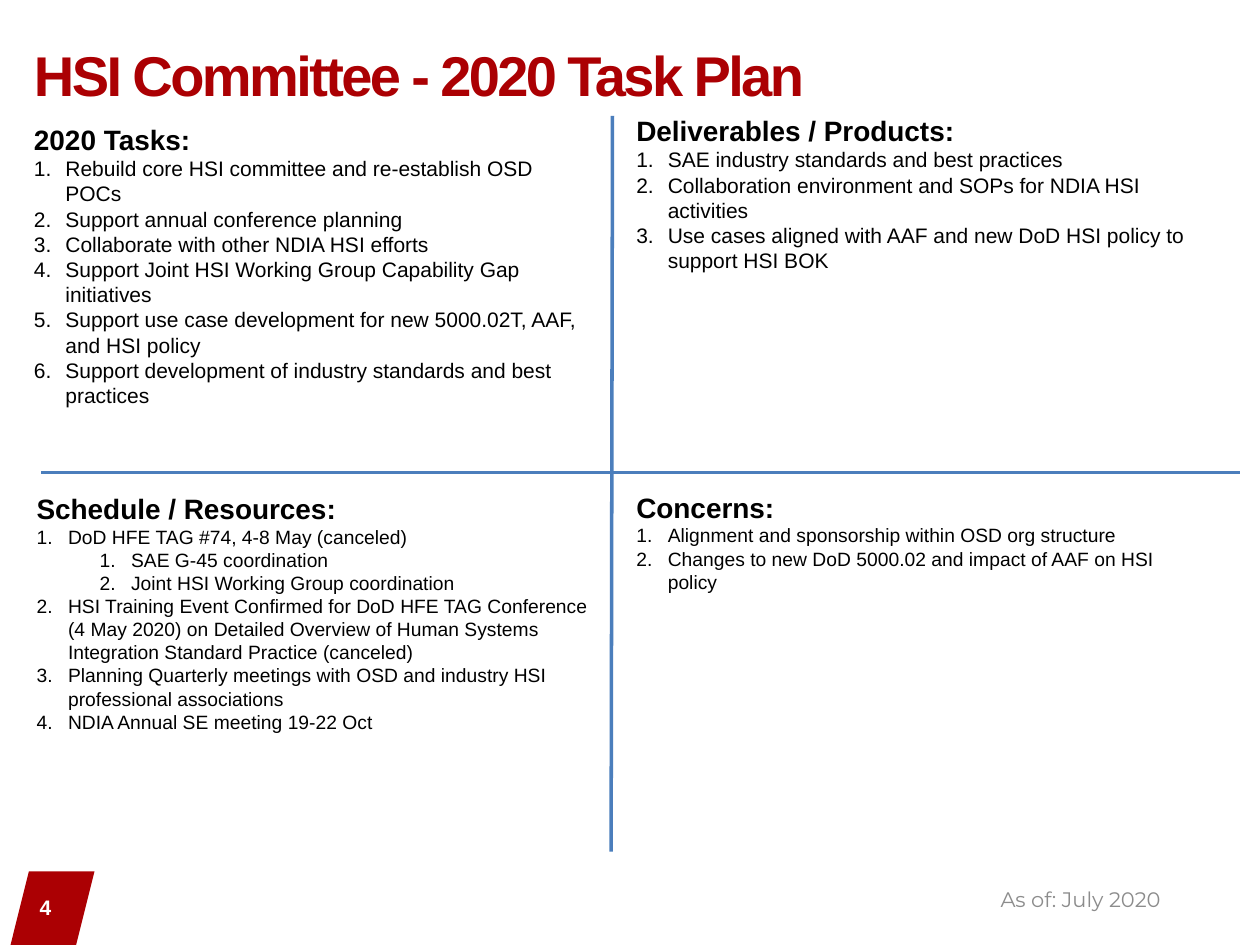
from lxml import etree
from pptx import Presentation
from pptx import util as u
from pptx.dml.color import RGBColor
from pptx.enum import shapes, text
from pptx.oxml.ns import qn

Pt = u.Pt
COLORS = {"red": "AB0003", "blue": "4B7EBC", "gray": "8C8C8C",
          "black": "000000", "white": "FFFFFF"}

TITLE = "HSI Committee - 2020 Task Plan"
QUADRANTS = [
    {"heading": "2020 Tasks:", "box": (12.2, 66.2, 332, 199), "size": 12, "items": [
        (0, "Rebuild core HSI committee and re-establish OSD POCs"),
        (0, "Support annual conference planning"),
        (0, "Collaborate with other NDIA HSI efforts"),
        (0, "Support Joint HSI Working Group Capability Gap initiatives"),
        (0, "Support use case development for new 5000.02T, AAF, and HSI policy"),
        (0, "Support development of industry standards and best practices")]},
    {"heading": "Deliverables / Products:", "box": (356.4, 61.2, 345, 99.4), "size": 12, "items": [
        (0, "SAE industry standards and best practices"),
        (0, "Collaboration environment and SOPs for NDIA HSI activities"),
        (0, "Use cases aligned with AAF and new DoD HSI policy to support HSI BOK")]},
    {"heading": "Schedule / Resources:", "box": (13.7, 277.2, 335, 173.5), "size": 11, "items": [
        (0, "DoD HFE TAG #74, 4-8 May (canceled)"),
        (1, "SAE G-45 coordination"),
        (1, "Joint HSI Working Group coordination"),
        (0, "HSI Training Event Confirmed for DoD HFE TAG Conference (4 May 2020) on "
            "Detailed Overview of Human Systems Integration Standard Practice (canceled)"),
        (0, "Planning Quarterly meetings with OSD and industry HSI professional associations"),
        (0, "NDIA Annual SE meeting 19-22 Oct")]},
    {"heading": "Concerns:", "box": (356.4, 276.5, 332.6, 67), "size": 11, "items": [
        (0, "Alignment and sponsorship within OSD org structure"),
        (0, "Changes to new DoD 5000.02 and impact of AAF on HSI policy")]},
]
DIVIDERS = [(350, 66.2, 349.2, 486.7), (23.7, 270, 708.5, 270)]
FOOTERS = [
    {"text": "4", "box": (12.2, 504, 168, 28.8), "left": 10.5, "align": "LEFT",
     "font": {"name": "Arial", "size": Pt(12), "bold": True}, "color": "white"},
    {"text": "As of: July 2020", "box": (533.5, 499.7, 168, 28.8), "left": 7.2, "align": "CENTER",
     "font": {"name": "Montserrat", "size": Pt(12), "bold": False}, "color": "gray"},
]


def rgb(name):
    return RGBColor.from_string(COLORS[name])


def assign(obj, values):
    for name, value in values.items():
        setattr(obj, name, value)


def place(sp, box):
    assign(sp, dict(zip(("left", "top", "width", "height"), map(Pt, box))))


def format_frame(tf, anchor, left=7.2):
    assign(tf, {"word_wrap": True, "auto_size": text.MSO_AUTO_SIZE.NONE,
                "vertical_anchor": anchor, "margin_left": Pt(left),
                "margin_right": Pt(7.2), "margin_top": Pt(3.6), "margin_bottom": Pt(3.6)})


def add_run(p, content, font, color):
    r = p.add_run()
    r.text = content
    assign(r.font, font)
    r.font.color.rgb = rgb(color)
    return r


def add_line(p, content, size, bold, indent, hanging, level=0, numbered=True):
    assign(p, {"level": level, "space_before": Pt(0), "space_after": Pt(0),
               "line_spacing": 1.0, "alignment": text.PP_ALIGN.LEFT})
    pPr = p._p.get_or_add_pPr()
    pPr.set("marL", str(Pt(indent)))
    pPr.set("indent", str(-Pt(hanging)))
    if numbered:
        etree.SubElement(pPr, qn("a:buFont"), typeface="+mj-lt")
        etree.SubElement(pPr, qn("a:buAutoNum"), type="arabicPeriod")
    else:
        etree.SubElement(pPr, qn("a:buNone"))
    add_run(p, content, {"name": "Arial", "size": Pt(size), "bold": bold}, "black")


def fill_quadrant(sp, quadrant):
    place(sp, quadrant["box"])
    tf = sp.text_frame
    format_frame(tf, text.MSO_ANCHOR.TOP)
    add_line(tf.paragraphs[0], quadrant["heading"], 16, True, 15, 15, numbered=False)
    for level, item in quadrant["items"]:
        add_line(tf.add_paragraph(), item, quadrant["size"], False, 18 + 36 * level, 18, level)


def main():
    prs = Presentation()
    assign(prs, {"slide_width": Pt(720), "slide_height": Pt(540)})
    s = prs.slides.add_slide(prs.slide_layouts.get_by_name("Comparison"))

    badge = s.shapes.add_shape(shapes.MSO_SHAPE.PARALLELOGRAM, Pt(6), Pt(498), Pt(48), Pt(42))
    badge.shadow.inherit = False
    badge.fill.solid()
    badge.fill.fore_color.rgb = rgb("red")
    badge.line.fill.background()

    title = s.shapes.title
    place(title, (12.2, 11.5, 594, 61.2))
    format_frame(title.text_frame, text.MSO_ANCHOR.MIDDLE)
    p = title.text_frame.paragraphs[0]
    p.alignment = text.PP_ALIGN.LEFT
    r = add_run(p, TITLE, {"name": "Arial", "size": Pt(32), "bold": True}, "red")
    r._r.get_or_add_rPr().set("spc", "-150")

    bodies = [sp for sp in s.placeholders if sp.placeholder_format.idx > 0]
    for sp, quadrant in zip(bodies, QUADRANTS):
        fill_quadrant(sp, quadrant)

    for ends in DIVIDERS:
        line = s.shapes.add_connector(shapes.MSO_CONNECTOR.STRAIGHT, *map(Pt, ends))
        line.line.width = Pt(2)
        line.line.color.rgb = rgb("blue")
        etree.SubElement(line._element.spPr, qn("a:effectLst"))

    for footer in FOOTERS:
        sp = s.shapes.add_textbox(*map(Pt, footer["box"]))
        format_frame(sp.text_frame, text.MSO_ANCHOR.MIDDLE, footer["left"])
        p = sp.text_frame.paragraphs[0]
        p.alignment = text.PP_ALIGN[footer["align"]]
        add_run(p, footer["text"], footer["font"], footer["color"])

    prs.save("out.pptx")


if __name__ == "__main__":
    main()
